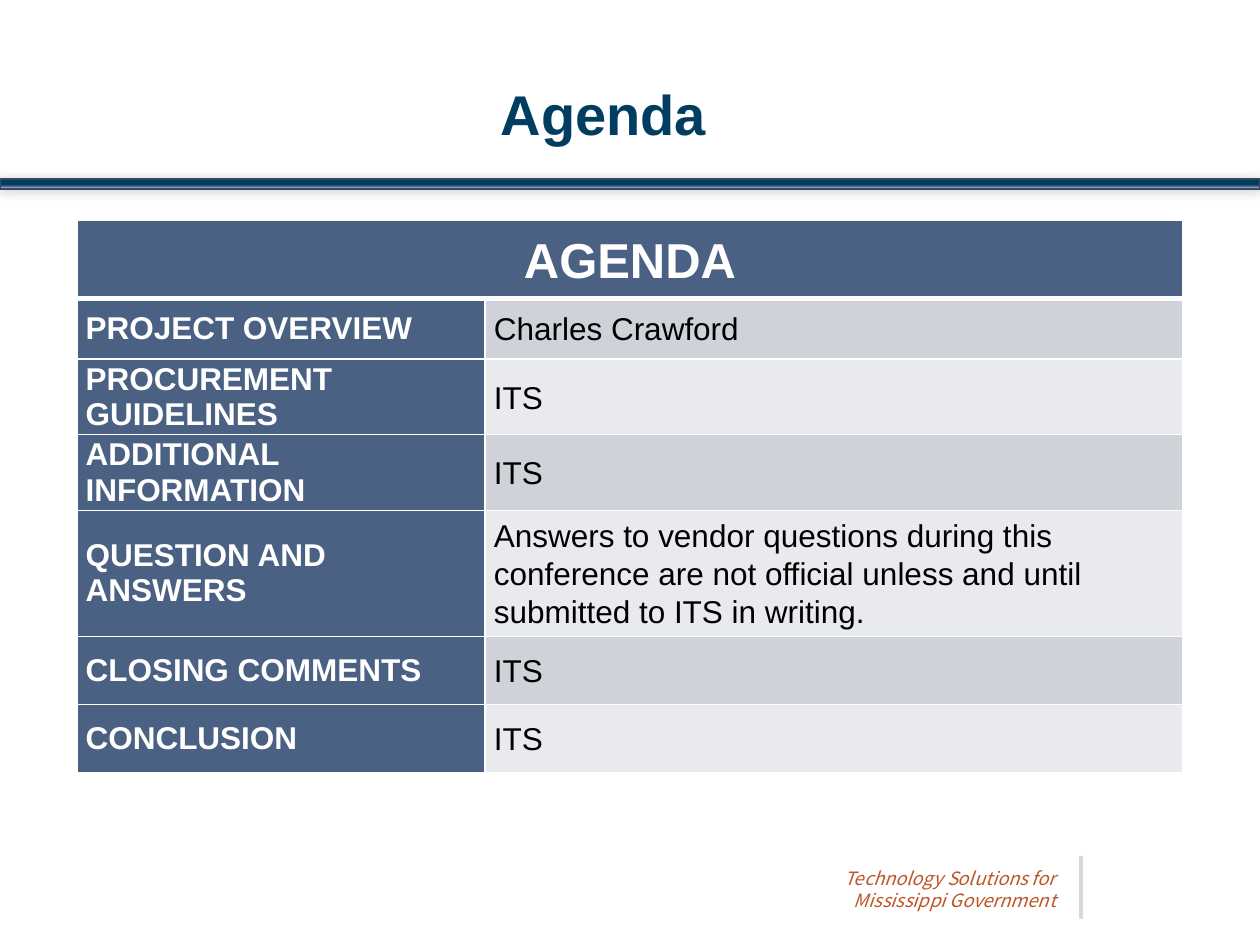
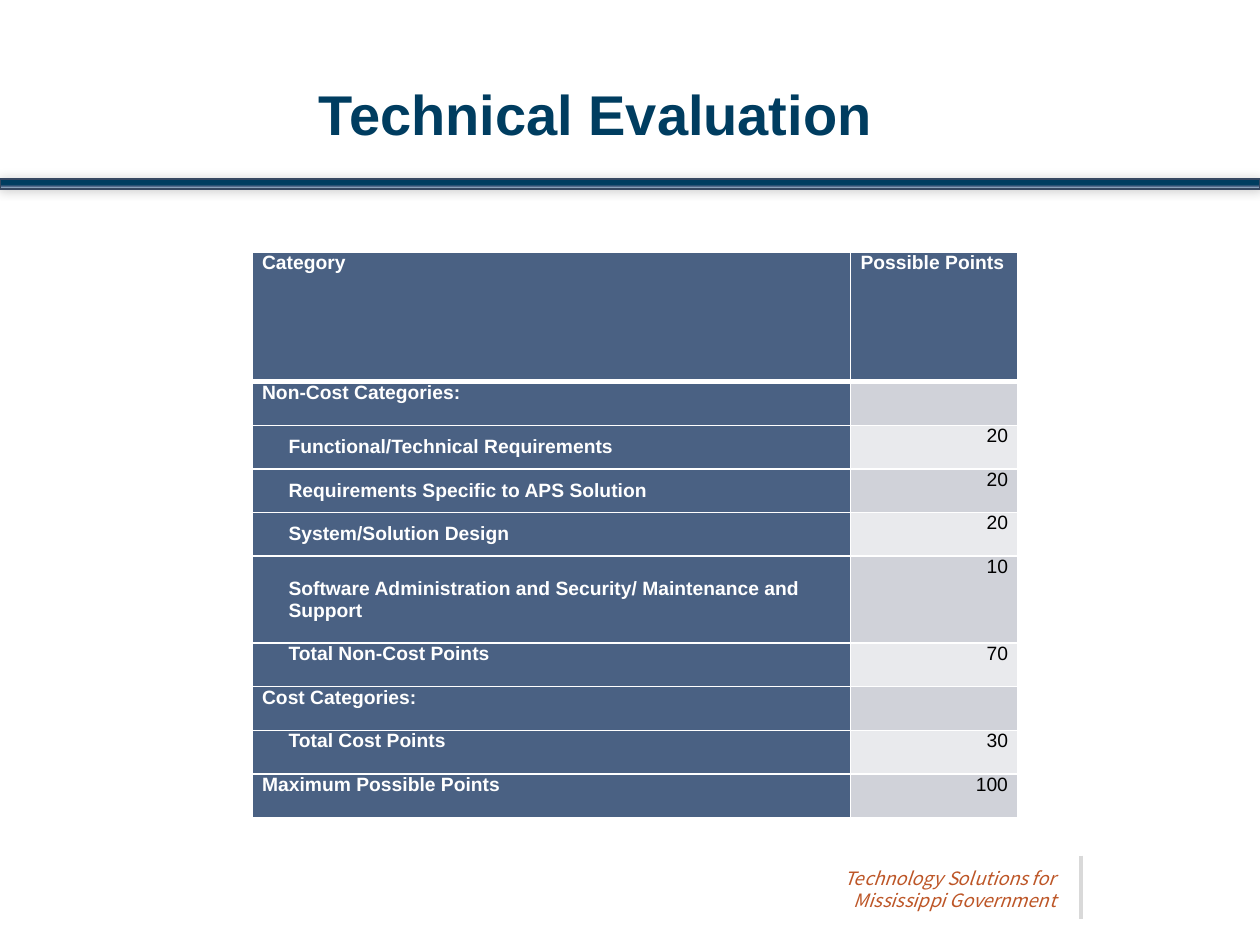
"""Build the agenda and technical evaluation slides."""
from lxml.etree import SubElement
from pptx import Presentation
from pptx.dml.color import RGBColor
from pptx.enum.shapes import MSO_CONNECTOR, MSO_SHAPE
from pptx.enum.text import MSO_ANCHOR, MSO_AUTO_SIZE, PP_ALIGN
from pptx.oxml import parse_xml
from pptx.oxml.ns import nsdecls, qn
from pptx.util import Inches, Pt

NAVY = RGBColor(0x00, 0x3D, 0x60)
SLATE = RGBColor(0x4A, 0x61, 0x83)
PALE_BLUE = RGBColor(0xD9, 0xF1, 0xFF)
BAND_EDGE = RGBColor(0x37, 0x48, 0x61)
RUST = RGBColor(0xBD, 0x56, 0x27)
RULE_GREY = RGBColor(0xD9, 0xD9, 0xD9)
ROW_DARK = RGBColor(0xD0, 0xD2, 0xD9)
ROW_LIGHT = RGBColor(0xE9, 0xEA, 0xED)
WHITE = RGBColor(0xFF, 0xFF, 0xFF)
BLACK = RGBColor(0x00, 0x00, 0x00)

BODY_FONT = "Arial"
FOOTER_FONT = "Noto Sans CJK SC"
FOOTER_LINES = ("Technology Solutions for", "Mississippi Government")

AGENDA = (
    ("PROJECT OVERVIEW", "Charles Crawford"),
    ("PROCUREMENT GUIDELINES", "ITS"),
    ("ADDITIONAL INFORMATION", "ITS"),
    ("QUESTION AND ANSWERS",
     "Answers to vendor questions during this conference are not official "
     "unless and until submitted to ITS in writing."),
    ("CLOSING COMMENTS", "ITS"),
    ("CONCLUSION", "ITS"),
)

HEADING, CRITERION, TOTAL = "heading", "criterion", "total"
EVALUATION = (
    ("Non-Cost Categories:", "", HEADING),
    ("Functional/Technical Requirements", "20", CRITERION),
    ("Requirements Specific to APS Solution", "20", CRITERION),
    ("System/Solution Design", "20", CRITERION),
    ("Software Administration and Security/ Maintenance and Support", "10", CRITERION),
    ("Total Non-Cost Points", "70", TOTAL),
    ("Cost Categories:", "", HEADING),
    ("Total Cost Points", "30", TOTAL),
    ("Maximum Possible Points", "100", HEADING),
)


class SlideBuilder:
    def __init__(self):
        self.deck = Presentation()
        self.deck.slide_width = Inches(10)
        self.deck.slide_height = Inches(7.5)
        self.page = None

    def start(self, title):
        self.page = self.deck.slides.add_slide(self.deck.slide_layouts[5])
        self.band()
        self.footer()
        self.title(title)

    def set_text(self, paragraph, text, size, colour, font=BODY_FONT, bold=False,
                 italic=False, align=PP_ALIGN.LEFT, spacing=None, indent=0):
        paragraph.text = text
        paragraph.alignment = align
        paragraph.line_spacing = spacing
        if indent:
            paragraph._p.get_or_add_pPr().set("marL", str(Inches(indent)))
        style = paragraph.font
        style.name, style.size = font, Pt(size)
        style.bold, style.italic = bold, italic
        style.color.rgb = colour

    def title(self, text):
        box = self.page.shapes.title
        box.left, box.top = Inches(-0.01), Inches(0.58)
        box.width, box.height = Inches(10), Inches(0.64)
        frame = box.text_frame
        frame.auto_size = MSO_AUTO_SIZE.NONE
        frame.vertical_anchor = MSO_ANCHOR.TOP
        frame.margin_right = Inches(0.5)
        self.set_text(frame.paragraphs[0], text, 32, NAVY, bold=True, align=PP_ALIGN.CENTER)

    def band(self):
        band = self.page.shapes.add_shape(
            MSO_SHAPE.RECTANGLE, 0, Inches(1.42), Inches(10), Inches(0.08))
        band.line.color.rgb = BAND_EDGE
        band.line.width = Pt(1.5)
        stops = "".join(
            f'<a:gs pos="{percent * 1000}"><a:srgbClr val="{colour}"/></a:gs>'
            for percent, colour in ((55, NAVY), (74, SLATE), (100, PALE_BLUE)))
        properties = band._element.spPr
        properties.find(qn("a:prstGeom")).addnext(parse_xml(
            f'<a:gradFill {nsdecls("a")}><a:gsLst>{stops}</a:gsLst>'
            '<a:lin ang="5400000" scaled="0"/></a:gradFill>'))
        properties.append(parse_xml(
            f'<a:effectLst {nsdecls("a")}>'
            f'<a:outerShdw blurRad="{Pt(6)}" dist="0" dir="18900000">'
            f'<a:srgbClr val="{BLACK}"><a:alpha val="20000"/></a:srgbClr>'
            '</a:outerShdw></a:effectLst>'))

    def footer(self):
        box = self.page.shapes.add_textbox(
            Inches(0.67), Inches(6.83), Inches(7.81), Inches(0.45))
        frame = box.text_frame
        frame.word_wrap = True
        for index, line in enumerate(FOOTER_LINES):
            paragraph = frame.add_paragraph() if index else frame.paragraphs[0]
            self.set_text(paragraph, line, 10.5, RUST, font=FOOTER_FONT, italic=True,
                          align=PP_ALIGN.RIGHT, spacing=Pt(12.6))
        rule = self.page.shapes.add_connector(
            MSO_CONNECTOR.STRAIGHT, Inches(8.58), Inches(6.79), Inches(8.58), Inches(7.29))
        rule.line.color.rgb = RULE_GREY
        rule.line.width = Pt(2.25)
        SubElement(rule._element.spPr, qn("a:effectLst"))

    def table(self, left, top, widths, heights, margin):
        table = self.page.shapes.add_table(
            len(heights), len(widths), Inches(left), Inches(top),
            Inches(sum(widths)), Inches(sum(heights))).table
        table.first_row = table.horz_banding = False
        for column, width in zip(table.columns, widths):
            column.width = Inches(width)
        for index, (row, height) in enumerate(zip(table.rows, heights)):
            row.height = Inches(height)
            for position, cell in enumerate(row.cells):
                cell.margin_left = cell.margin_right = Inches(margin)
                cell.margin_top = cell.margin_bottom = 0
                self.borders(cell, index)
                shade = ROW_DARK if index % 2 else ROW_LIGHT
                cell.fill.solid()
                cell.fill.fore_color.rgb = SLATE if index == 0 or position == 0 else shade
        return table

    def borders(self, cell, row):
        thick_side = {0: "B", 1: "T"}.get(row)
        for side in "LRTB":
            width = Pt(3 if side == thick_side else 1)
            cell._tc.get_or_add_tcPr().append(parse_xml(
                f'<a:ln{side} {nsdecls("a")} w="{width}"><a:solidFill>'
                f'<a:srgbClr val="{WHITE}"/></a:solidFill></a:ln{side}>'))

    def fill_cell(self, cell, text, size, colour=WHITE, anchor=MSO_ANCHOR.MIDDLE, **style):
        cell.vertical_anchor = anchor
        self.set_text(cell.text_frame.paragraphs[0], text, size, colour,
                      bold=colour == WHITE, **style)


def agenda_slide(builder):
    builder.start("Agenda")
    table = builder.table(0.61, 1.75, (3.24, 5.54),
                          (0.62, 0.48, 0.5, 0.54, 1, 0.54, 0.54), 0.07)
    table.cell(0, 0).merge(table.cell(0, 1))
    builder.fill_cell(table.cell(0, 0), "AGENDA", 28, align=PP_ALIGN.CENTER, spacing=1.07)
    for row, (topic, detail) in enumerate(AGENDA, 1):
        builder.fill_cell(table.cell(row, 0), topic, 18)
        builder.fill_cell(table.cell(row, 1), detail, 18, BLACK, spacing=1.07)


def evaluation_slide(builder):
    builder.start("Technical Evaluation ")
    line_height = 3.46 / 10
    heights = [1.03] + [line_height * (2 if len(name) > 50 else 1)
                        for name, points, kind in EVALUATION]
    table = builder.table(2, 2, (4.75, 1.33), heights, 0.08)
    for column, heading in enumerate(("Category", "Possible Points")):
        builder.fill_cell(table.cell(0, column), heading, 11,
                          anchor=MSO_ANCHOR.TOP, align=PP_ALIGN.JUSTIFY)
    for row, (name, points, kind) in enumerate(EVALUATION, 1):
        criterion = kind == CRITERION
        builder.fill_cell(table.cell(row, 0), name, 11,
                          anchor=MSO_ANCHOR.MIDDLE if criterion else MSO_ANCHOR.TOP,
                          align=PP_ALIGN.LEFT if criterion else PP_ALIGN.JUSTIFY,
                          indent=0 if kind == HEADING else 0.21)
        builder.fill_cell(table.cell(row, 1), points, 11, BLACK,
                          anchor=MSO_ANCHOR.TOP, align=PP_ALIGN.RIGHT)


def main():
    builder = SlideBuilder()
    agenda_slide(builder)
    evaluation_slide(builder)
    builder.deck.save("out.pptx")


if __name__ == "__main__":
    main()
